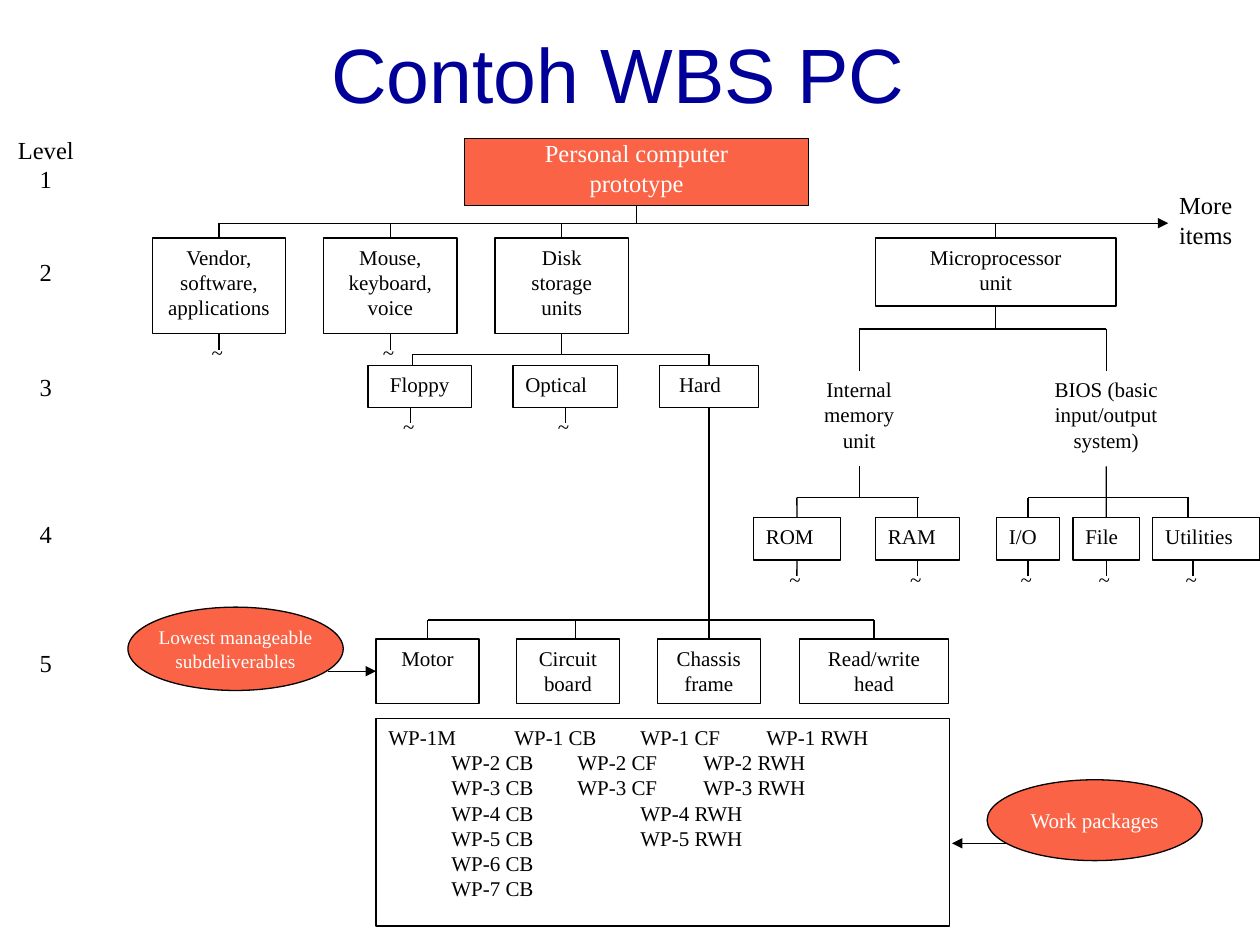
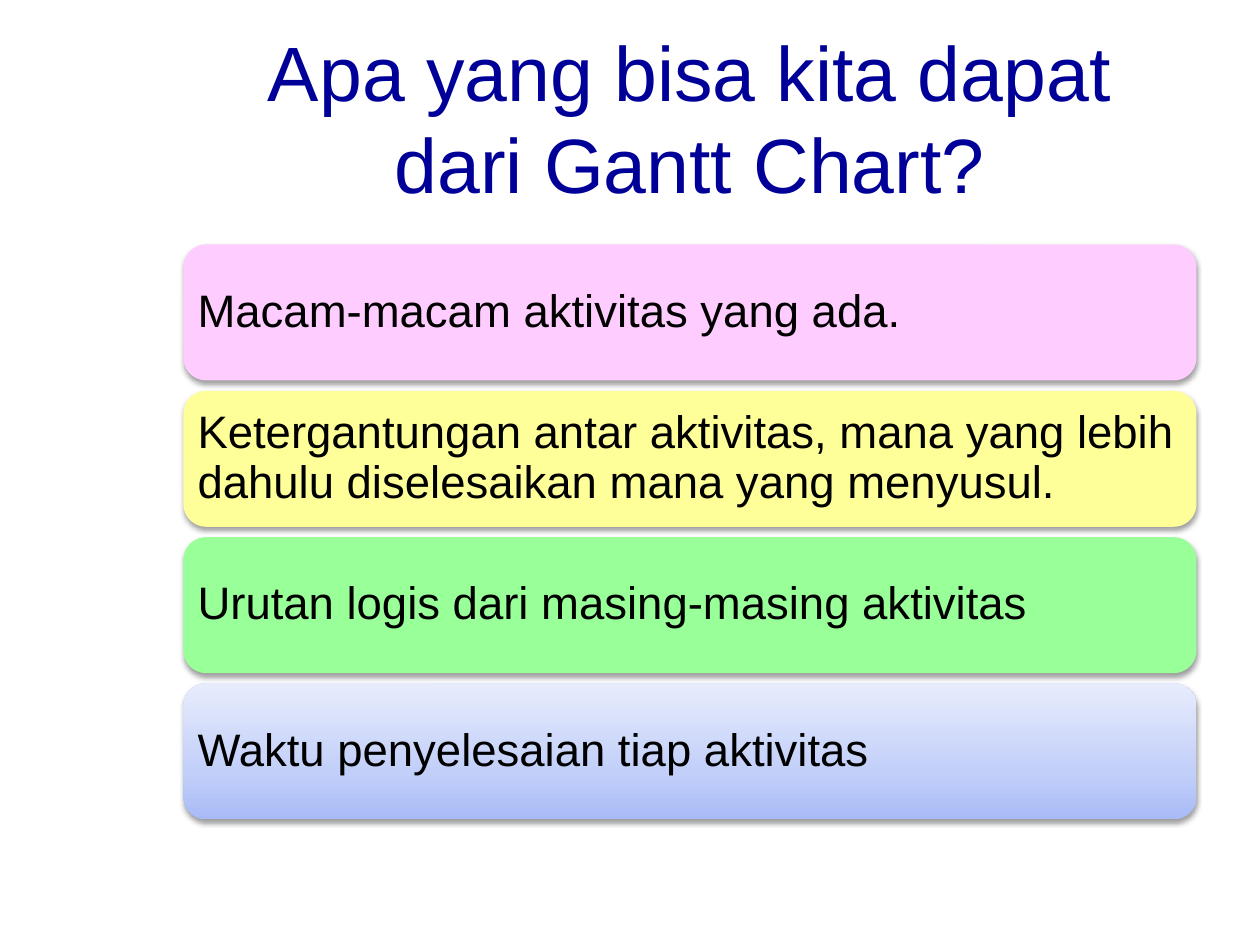
from copy import deepcopy
from itertools import zip_longest

from lxml.etree import SubElement
from pptx import Presentation
from pptx.dml.color import RGBColor
from pptx.enum.shapes import MSO_CONNECTOR as Wire, MSO_SHAPE as Preset
from pptx.enum.text import MSO_ANCHOR as Anchor, MSO_AUTO_SIZE as AutoSize, PP_ALIGN as Align
from pptx.oxml.ns import qn
from pptx.util import Cm, Pt

COLORS = {
    "title": "000099", "ink": "000000", "paper": "FFFFFF", "accent": "FB6346",
    "pink": "FFCCFF", "yellow": "FFFF99", "green": "99FF99",
}
BLUE_STOPS = [(0, "A8BBF7"), (0.35, "C2CFF8"), (1, "E7ECFD")]
SANS, SERIF = "Arial", "Times New Roman"
TOP, BOTTOM, LEFT = 0, 2, 1


def rgb(name):
    return RGBColor.from_string(COLORS.get(name, name))


def write(frame, text, size, color="ink", font=SERIF, align=Align.CENTER, anchor=Anchor.TOP):
    frame.word_wrap = True
    frame.auto_size = AutoSize.NONE
    frame.vertical_anchor = anchor
    paragraph = frame.paragraphs[0]
    paragraph.alignment = align
    for number, line in enumerate(text.split("\n")):
        if number:
            paragraph.add_line_break()
        run = paragraph.add_run()
        run.text = line
        run.font.size = Pt(size)
        run.font.name = font
        run.font.color.rgb = rgb(color)
    return paragraph


def add_titled_slide(deck, title, width, height):
    slide = deck.slides.add_slide(deck.slide_layouts[5])
    heading = slide.shapes.title
    heading.left, heading.top = Cm(3.7), Cm(0.76)
    heading.width, heading.height = Cm(width), Cm(height)
    write(heading.text_frame, title, 44, "title", SANS, anchor=Anchor.MIDDLE)
    return slide


def add_label(slide, box, text, size=12, align=Align.CENTER):
    label = slide.shapes.add_textbox(*map(Cm, box))
    write(label.text_frame, text, size, align=align)
    return label


def add_node(slide, box, preset=Preset.RECTANGLE, fill=None):
    node = slide.shapes.add_shape(preset, *map(Cm, box))
    node.shadow.inherit = False
    if fill:
        node.fill.solid()
        node.fill.fore_color.rgb = rgb(fill)
    else:
        node.fill.background()
    node.line.color.rgb = rgb("ink")
    node.line.width = Pt(0.75)
    return node


def add_wire(slide, x1, y1, x2, y2, arrow=False):
    wire = slide.shapes.add_connector(Wire.STRAIGHT, Cm(x1), Cm(y1), Cm(x2), Cm(y2))
    wire.line.color.rgb = rgb("ink")
    wire.line.width = Pt(0.75)
    if arrow:
        SubElement(wire.line._get_or_add_ln(), qn("a:tailEnd"), type="triangle")
    SubElement(wire._element.spPr, qn("a:effectLst"))
    return wire


def add_stem(slide, node, side, y, x=None):
    edge = node.top.cm + (node.height.cm if side == BOTTOM else 0)
    middle = node.left.cm + node.width.cm / 2
    stem_x = middle if x is None else x
    stem = add_wire(slide, stem_x, edge, stem_x, y)
    if x is None:
        stem.begin_connect(node, side)


def add_link(slide, upper, lower):
    link = add_wire(slide, 0, 0, 1, 1)
    link.begin_connect(upper, BOTTOM)
    link.end_connect(lower, TOP)


def add_continuation(slide, node, x=None):
    bottom = node.top.cm + node.height.cm
    add_stem(slide, node, BOTTOM, bottom + 0.32, x)
    center = node.left.cm + node.width.cm / 2 if x is None else x
    add_label(slide, (center - 0.4, bottom, 0.8, 0.84), "~", align=Align.LEFT)


def add_row(slide, left, top, height, items, align=Align.CENTER):
    nodes = []
    for text, offset, width in items:
        node = add_node(slide, (left + offset, top, width, height))
        write(node.text_frame, text, 12, align=align)
        nodes.append(node)
    return nodes


def add_level_scale(slide, left, top):
    levels = [("Level\n1", 0), ("2", 2.46), ("3", 4.78), ("4", 7.75), ("5", 10.34)]
    for text, offset in levels:
        add_label(slide, (left, top + offset, 1.85, 1.57), text, 14)


def add_top_levels(slide, left, top):
    rail = top + 1.71
    root = add_node(slide, (left + 6.3, top, 6.93, 1.35), fill="accent")
    root.text_frame.margin_top = 0
    write(root.text_frame, "Personal computer\nprototype", 14, "paper")
    add_stem(slide, root, BOTTOM, rail)
    add_wire(slide, left + 1.35, rail, left + 20.48, rail, arrow=True)
    add_label(slide, (left + 20.45, top + 0.92, 1.85, 1.57), "More\nitems", 14, Align.LEFT)

    texts = ["Vendor,\nsoftware,\napplications", "Mouse,\nkeyboard,\nvoice", "Disk\nstorage\nunits"]
    items = [(text, 3.455 * i, 2.69) for i, text in enumerate(texts)]
    vendor, mouse, disk = add_row(slide, left, top + 2.01, 1.93, items)
    [processor] = add_row(slide, left, top + 2.01, 1.37, [("Microprocessor\nunit", 14.58, 4.85)])
    for node in (vendor, mouse, disk, processor):
        add_stem(slide, node, TOP, rail)
    for node in (vendor, mouse):
        add_continuation(slide, node)
    return disk, processor


def add_storage_branch(slide, left, top, disk):
    rail = top - 0.23
    [floppy] = add_row(slide, left, top, 0.84, [("Floppy", 0, 2.08)])
    optical, hard = add_row(slide, left, top, 0.84,
                            [("Optical", 2.92, 2.11), ("Hard", 5.87, 2)], Align.LEFT)
    hard.text_frame.margin_left = Cm(0.4)
    add_stem(slide, disk, BOTTOM, rail)
    add_wire(slide, left + 0.89, rail, left + 6.89, rail)
    add_stem(slide, floppy, TOP, rail, left + 0.89)
    add_stem(slide, hard, TOP, rail)
    add_continuation(slide, floppy, left + 0.86)
    add_continuation(slide, optical)
    return hard


def add_processor_branch(slide, left, top, processor):
    upper_rail, lower_rail = top, top + 3.4
    memory = add_label(slide, (left + 1.01, top + 0.84, 2.24, 1.93), "Internal\nmemory\nunit")
    bios = add_label(slide, (left + 5.57, top + 0.84, 3.08, 1.93), "BIOS (basic\ninput/output\nsystem)")
    add_stem(slide, processor, BOTTOM, upper_rail)
    add_wire(slide, left + 2.13, upper_rail, left + 7.11, upper_rail)
    for unit in (memory, bios):
        add_stem(slide, unit, TOP, upper_rail)
    add_stem(slide, memory, BOTTOM, lower_rail)

    items = [("ROM", 0, 1.75), ("RAM", 2.46, 1.7), ("I/O", 4.9, 1.27),
             ("File", 6.44, 1.34), ("Utilities", 8.05, 2.16)]
    rom, ram, ports, file, utilities = add_row(slide, left, top + 3.8, 0.86, items, Align.LEFT)
    add_link(slide, bios, file)
    for start, end in ((0.87, 3.33), (5.53, 8.78)):
        add_wire(slide, left + start, lower_rail, left + end, lower_rail)
    for node in (rom, ram, ports):
        add_stem(slide, node, TOP, lower_rail)
    add_stem(slide, utilities, TOP, lower_rail, left + 8.76)
    for node in (rom, ram, ports, file):
        add_continuation(slide, node)
    add_continuation(slide, utilities, left + 8.86)


def add_work_packages(slide, left, top, hard):
    rail = top - 0.38
    items = [("Motor", 0, 2.08), ("Circuit\nboard", 2.83, 2.08),
             ("Chassis\nframe", 5.67, 2.08), ("Read/write\nhead", 8.54, 3)]
    motor, circuit, chassis, head = add_row(slide, left, top, 1.3, items)
    add_link(slide, hard, chassis)
    add_wire(slide, left + 1.04, rail, left + 10.04, rail)
    add_stem(slide, motor, TOP, rail)
    add_stem(slide, circuit, TOP, rail, left + 4.02)
    add_stem(slide, head, TOP, rail)

    columns = [["WP-1M"]]
    for code, count in (("CB", 7), ("CF", 3), ("RWH", 5)):
        columns.append([f"WP-{number} {code}" for number in range(1, count + 1)])
    rows = ["\t".join(row).rstrip() for row in zip_longest(*columns, fillvalue="")]
    packages = add_node(slide, (left, top + 1.6, 11.56, 4.19))
    write(packages.text_frame, "\n".join(rows), 12, align=Align.LEFT)

    callouts = [("Lowest manageable\nsubdeliverables", -5, -0.64, 1.68, 11),
                ("Work packages", 12.32, 2.84, 1.63, 12)]
    for text, x, y, height, size in callouts:
        callout = add_node(slide, (left + x, top + y, 4.34, height), Preset.OVAL, "accent")
        write(callout.text_frame, text, size, "paper", anchor=Anchor.MIDDLE)
        callout.text_frame.word_wrap = False
    pointer = add_wire(slide, left - 0.96, top + 0.65, left, top + 0.65, arrow=True)
    pointer.end_connect(motor, LEFT)
    add_wire(slide, left + 12.73, top + 4.12, left + 11.61, top + 4.12, arrow=True)


def add_soft_shadow(card):
    effects = SubElement(card._element.spPr, qn("a:effectLst"))
    shadow = SubElement(effects, qn("a:outerShdw"), blurRad=str(Pt(3.1)), dist=str(Pt(1.6)),
                        dir="5400000", rotWithShape="0")
    black = SubElement(shadow, qn("a:srgbClr"), val=COLORS["ink"])
    SubElement(black, qn("a:alpha"), val="38000")


def fill_blue(card):
    card.fill.gradient()
    card.fill.gradient_angle = 90
    stops = card._element.spPr.find(".//" + qn("a:gsLst"))
    stops.append(deepcopy(stops[0]))
    for stop, (position, color) in zip(card.fill.gradient_stops, BLUE_STOPS):
        stop.position = position
        stop.color.rgb = rgb(color)


def add_benefit_cards(slide, left, top, width, height, pitch):
    benefits = [
        ("Macam-macam aktivitas yang ada.", "pink"),
        ("Ketergantungan antar aktivitas, mana yang lebih dahulu diselesaikan mana yang menyusul.", "yellow"),
        ("Urutan logis dari masing-masing aktivitas", "green"),
        ("Waktu penyelesaian tiap aktivitas", None),
    ]
    for number, (text, color) in enumerate(benefits):
        box = (left, top + number * pitch, width, height)
        card = slide.shapes.add_shape(Preset.ROUNDED_RECTANGLE, *map(Cm, box))
        if color:
            card.fill.solid()
            card.fill.fore_color.rgb = rgb(color)
        else:
            fill_blue(card)
        card.line.fill.background()
        add_soft_shadow(card)
        frame = card.text_frame
        frame.margin_left = frame.margin_right = Cm(0.15)
        paragraph = write(frame, text, 26, font=SANS, align=Align.LEFT, anchor=Anchor.MIDDLE)
        paragraph.line_spacing = 0.9


def build_wbs_slide(deck):
    slide = add_titled_slide(deck, "Contoh WBS PC", 17.53, 1.42)
    add_level_scale(slide, 0, 2.59)
    disk, processor = add_top_levels(slide, 3.07, 2.79)
    hard = add_storage_branch(slide, 7.42, 7.37, disk)
    add_processor_branch(slide, 15.19, 6.63, processor)
    add_work_packages(slide, 7.58, 12.88, hard)


def build_gantt_slide(deck):
    slide = add_titled_slide(deck, "Apa yang bisa kita dapat dari Gantt Chart?", 20.42, 3.18)
    add_benefit_cards(slide, 3.7, 4.93, 20.42, 2.74, 2.95)


def main():
    deck = Presentation()
    deck.slide_width, deck.slide_height = Cm(25.4), Cm(19.05)
    build_wbs_slide(deck)
    build_gantt_slide(deck)
    deck.save("out.pptx")


if __name__ == "__main__":
    main()
